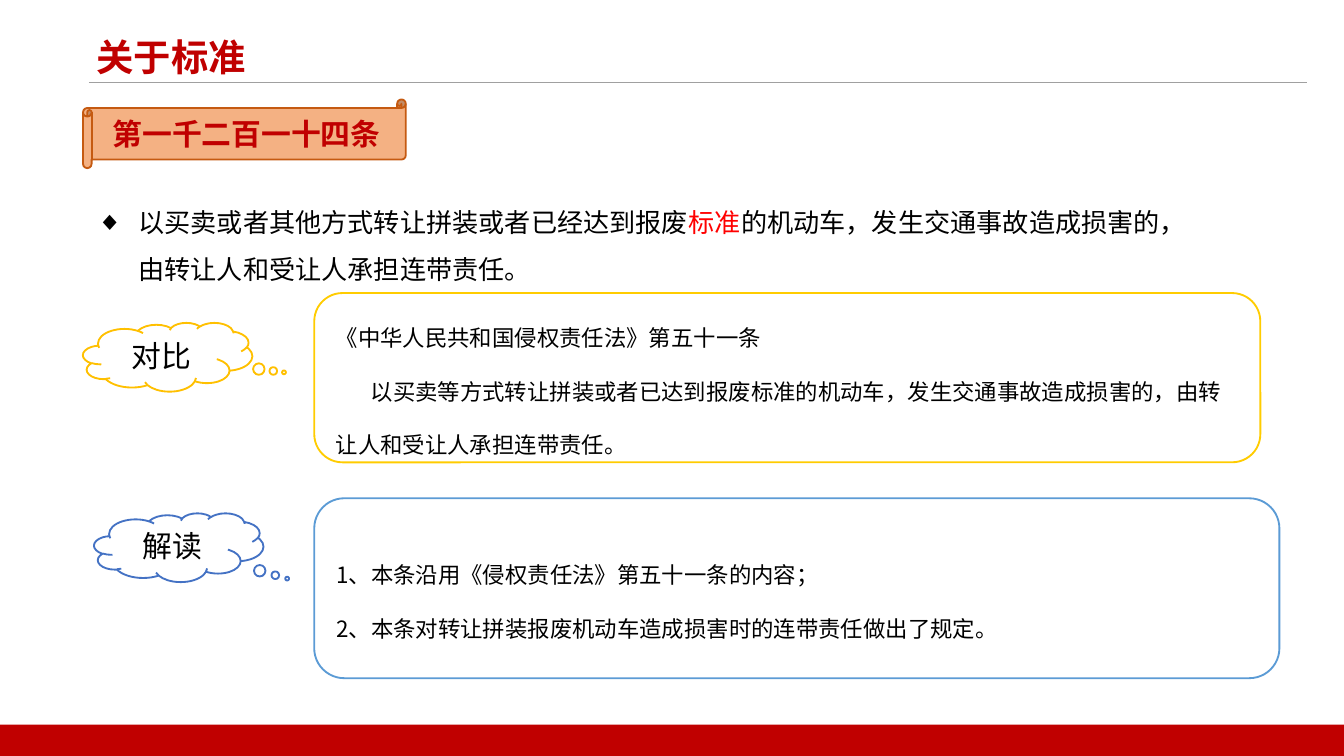
from dataclasses import dataclass

import lxml.etree
import pptx
import pptx.dml.color
import pptx.enum.shapes
import pptx.enum.text
import pptx.oxml.ns
import pptx.util

Cm = pptx.util.Cm
Shape = pptx.enum.shapes.MSO_SHAPE
Align = pptx.enum.text.PP_ALIGN
Anchor = pptx.enum.text.MSO_ANCHOR
qn = pptx.oxml.ns.qn


@dataclass(frozen=True)
class Theme:
    font: str = "Noto Sans CJK SC"
    paper: str = "FFFFFF"
    ink: str = "000000"
    red: str = "C00000"
    highlight: str = "FF0000"
    rule: str = "A0A0A0"
    scroll_fill: str = "F4B183"
    scroll_line: str = "C55A11"
    title_size: int = 20
    label_size: int = 16
    body_size: int = 14
    note_size: int = 12


@dataclass(frozen=True)
class Area:
    """Left, top, width and height in centimetres."""
    left: float
    top: float
    width: float
    height: float

    def lengths(self) -> tuple:
        return Cm(self.left), Cm(self.top), Cm(self.width), Cm(self.height)


@dataclass(frozen=True)
class Note:
    label: str
    cloud: Area
    cloud_line: str
    tail: tuple
    panel: Area
    panel_line: str
    lines: tuple
    indents: tuple


THEME = Theme()
SLIDE_WIDTH, SLIDE_HEIGHT = 25.4, 14.29
FOOTER_TOP = 13.7
RULE_LEFT, RULE_RIGHT, RULE_TOP = 1.68, 24.71, 1.55
HANGING = 0.79

NOTES = (
    Note("对比", Area(1.57, 6.1, 3.2, 1.3), "FFC000", (0.687, 0.223),
         Area(5.94, 5.54, 17.88, 3.2), "FFCC00",
         ("《中华人民共和国侵权责任法》第五十一条",
          "以买卖等方式转让拼装或者已达到报废标准的机动车，发生交通事故造成损害的，"
          "由转让人和受让人承担连带责任。"),
         (0, 0.66)),
    Note("解读", Area(1.78, 9.7, 3.2, 1.3), "4472C4", (0.64, 0.453),
         Area(5.94, 9.42, 18.24, 3.4), "5B9BD5",
         ("1、本条沿用《侵权责任法》第五十一条的内容；",
          "2、本条对转让拼装报废机动车造成损害时的连带责任做出了规定。"),
         (0, 0)),
)


def rgb(code: str):
    return pptx.dml.color.RGBColor.from_string(code)


def add_text(para, text: str, *, size: int, color: str = THEME.ink, bold: bool = False) -> None:
    span = para.add_run()
    span.text = text
    span.font.size = pptx.util.Pt(size)
    span.font.bold = bold
    span.font.color.rgb = rgb(color)
    span.font.name = THEME.font
    east_asian = lxml.etree.SubElement(span.font._element, qn("a:ea"))
    east_asian.set("typeface", THEME.font)


def format_para(para, *, align=Align.LEFT, spacing: float = 1.0,
                left: float = 0, first: float = 0, bullet: str = "") -> None:
    properties = para._p.get_or_add_pPr()
    properties.set("marL", str(Cm(left)))
    properties.set("indent", str(Cm(first)))
    if bullet:
        mark = lxml.etree.SubElement(properties, qn("a:buChar"))
        mark.set("char", bullet)
    para.alignment = align
    para.line_spacing = spacing
    para.space_before = pptx.util.Pt(0)


def place(box, area: Area, anchor) -> None:
    box.left, box.top, box.width, box.height = area.lengths()
    frame = box.text_frame
    frame.auto_size = pptx.enum.text.MSO_AUTO_SIZE.NONE
    frame.word_wrap = True
    frame.vertical_anchor = anchor


def add_box(page, kind, area: Area, *, fill: str = "", line: str = ""):
    box = page.shapes.add_shape(kind, *area.lengths())
    box.shadow.inherit = False
    if fill:
        box.fill.solid()
        box.fill.fore_color.rgb = rgb(fill)
    else:
        box.fill.background()
    if line:
        box.line.color.rgb = rgb(line)
        box.line.width = pptx.util.Pt(1)
    else:
        box.line.fill.background()
    box.text_frame.vertical_anchor = Anchor.MIDDLE
    return box


def add_label(box, text: str, *, color: str = THEME.ink, bold: bool = False) -> None:
    para = box.text_frame.paragraphs[0]
    format_para(para, align=Align.CENTER)
    add_text(para, text, size=THEME.label_size, color=color, bold=bold)


def add_rule(page) -> None:
    rule = page.shapes.add_connector(
        pptx.enum.shapes.MSO_CONNECTOR.STRAIGHT,
        Cm(RULE_LEFT), Cm(RULE_TOP), Cm(RULE_RIGHT), Cm(RULE_TOP))
    rule.line.color.rgb = rgb(THEME.rule)
    rule.line.width = pptx.util.Pt(0.5)
    lxml.etree.SubElement(rule._element.spPr, qn("a:effectLst"))


def add_note(page, note: Note) -> None:
    """Draws a cloud label and the outlined panel it introduces."""
    cloud = add_box(page, Shape.CLOUD_CALLOUT, note.cloud,
                    fill=THEME.paper, line=note.cloud_line)
    cloud.adjustments[0], cloud.adjustments[1] = note.tail
    add_label(cloud, note.label)
    panel = add_box(page, Shape.ROUNDED_RECTANGLE, note.panel, line=note.panel_line)
    frame = panel.text_frame
    for index, (text, indent) in enumerate(zip(note.lines, note.indents)):
        para = frame.add_paragraph() if index else frame.paragraphs[0]
        format_para(para, spacing=2.0, first=indent)
        add_text(para, text, size=THEME.note_size)


def main() -> None:
    deck = pptx.Presentation()
    deck.slide_width, deck.slide_height = Cm(SLIDE_WIDTH), Cm(SLIDE_HEIGHT)
    page = deck.slides.add_slide(deck.slide_layouts[1])
    page.background.fill.solid()
    page.background.fill.fore_color.rgb = rgb(THEME.paper)

    title, body = page.placeholders
    place(title, Area(1.57, 0.51, 4.67, 1.3), Anchor.TOP)
    heading = title.text_frame.paragraphs[0]
    format_para(heading)
    add_text(heading, "关于标准", size=THEME.title_size, color=THEME.red, bold=True)

    place(body, Area(1.57, 3.48, 20.68, 1.9), Anchor.TOP)
    article = body.text_frame.paragraphs[0]
    format_para(article, spacing=1.5, left=HANGING, first=-HANGING, bullet="◆")
    for text, color in (
        ("以买卖或者其他方式转让拼装或者已经达到报废", THEME.ink),
        ("标准", THEME.highlight),
        ("的机动车，发生交通事故造成损害的，由转让人和受让人承担连带责任。", THEME.ink),
    ):
        add_text(article, text, size=THEME.body_size, color=color)

    add_rule(page)
    add_box(page, Shape.RECTANGLE,
            Area(0, FOOTER_TOP, SLIDE_WIDTH, SLIDE_HEIGHT - FOOTER_TOP), fill=THEME.red)
    scroll = add_box(page, Shape.HORIZONTAL_SCROLL, Area(1.57, 1.88, 6.1, 1.3),
                     fill=THEME.scroll_fill, line=THEME.scroll_line)
    add_label(scroll, "第一千二百一十四条", color=THEME.red, bold=True)
    for note in NOTES:
        add_note(page, note)

    deck.save("out.pptx")


if __name__ == "__main__":
    main()
